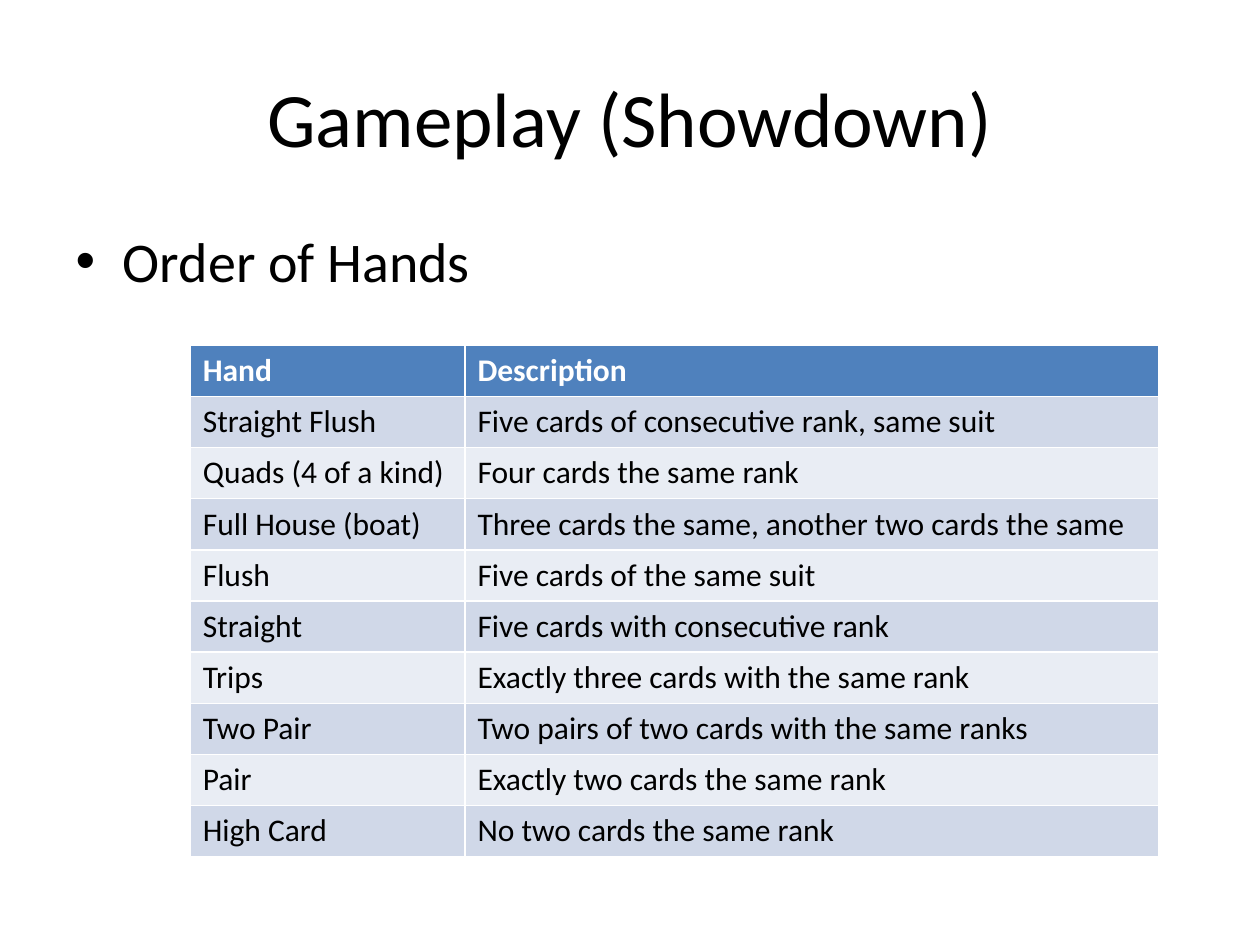
import pptx
import pptx.dml.color
import pptx.enum.text
import pptx.util

# Content
TITLE = "Gameplay (Showdown)"
POINT = "Order of Hands"
HANDS = [
    ("Hand", "Description"),
    ("Straight Flush", "Five cards of consecutive rank, same suit"),
    ("Quads (4 of a kind)", "Four cards the same rank"),
    ("Full House (boat)", "Three cards the same, another two cards the same"),
    ("Flush", "Five cards of the same suit"),
    ("Straight", "Five cards with consecutive rank"),
    ("Trips", "Exactly three cards with the same rank"),
    ("Two Pair", "Two pairs of two cards with the same ranks"),
    ("Pair", "Exactly two cards the same rank"),
    ("High Card", "No two cards the same rank"),
]

# Layout in inches, formats by part
WIDE, HIGH = 10, 7.5
EDGE = 0.05 * WIDE
COLS = (2.18, 5.51)
LEFT, TOP, DEEP = 1.51, 2.74, 4.06
HEAD, BANDS = "4F81BD", ("D0D8E8", "E9EDF4")
LOOKS = {
    "title": {"size": 44, "color": "000000"},
    "point": {"size": 32, "color": "000000"},
    "head": {"size": 18, "color": "FFFFFF", "bold": True},
    "cell": {"size": 18, "color": "000000", "bold": False},
}


def paint(item, code):
    item.rgb = pptx.dml.color.RGBColor.from_string(code)


def write(frame, text, look):
    frame.text = text
    font = frame.paragraphs[0].runs[0].font
    font.name = "Calibri"
    for key, value in LOOKS[look].items():
        if key == "color":
            paint(font.color, value)
        else:
            setattr(font, key, pptx.util.Pt(value) if key == "size" else value)


def place(shape, *box):
    for key, value in zip(("left", "top", "width", "height"), box):
        setattr(shape, key, pptx.util.Inches(value))


def main():
    deck = pptx.Presentation()
    deck.slide_width = pptx.util.Inches(WIDE)
    deck.slide_height = pptx.util.Inches(HIGH)
    slide = deck.slides.add_slide(deck.slide_layouts[1])

    # Title and bullet
    title, body = slide.placeholders
    place(title, EDGE, 0.3, WIDE - 2 * EDGE, 1.25)
    write(title.text_frame, TITLE, "title")
    title.text_frame.vertical_anchor = pptx.enum.text.MSO_ANCHOR.MIDDLE
    place(body, EDGE, 1.75, WIDE - 2 * EDGE, 4.95)
    write(body.text_frame, POINT, "point")

    # Table of hands
    box = [pptx.util.Inches(n) for n in (LEFT, TOP, sum(COLS), DEEP)]
    table = slide.shapes.add_table(len(HANDS), len(COLS), *box).table
    for col, width in zip(table.columns, COLS):
        col.width = pptx.util.Inches(width)
    for r, row in enumerate(HANDS):
        for c, text in enumerate(row):
            cell = table.cell(r, c)
            write(cell.text_frame, text, "cell" if r else "head")
            cell.fill.solid()
            paint(cell.fill.fore_color, BANDS[(r - 1) % 2] if r else HEAD)

    deck.save("out.pptx")


if __name__ == "__main__":
    main()
